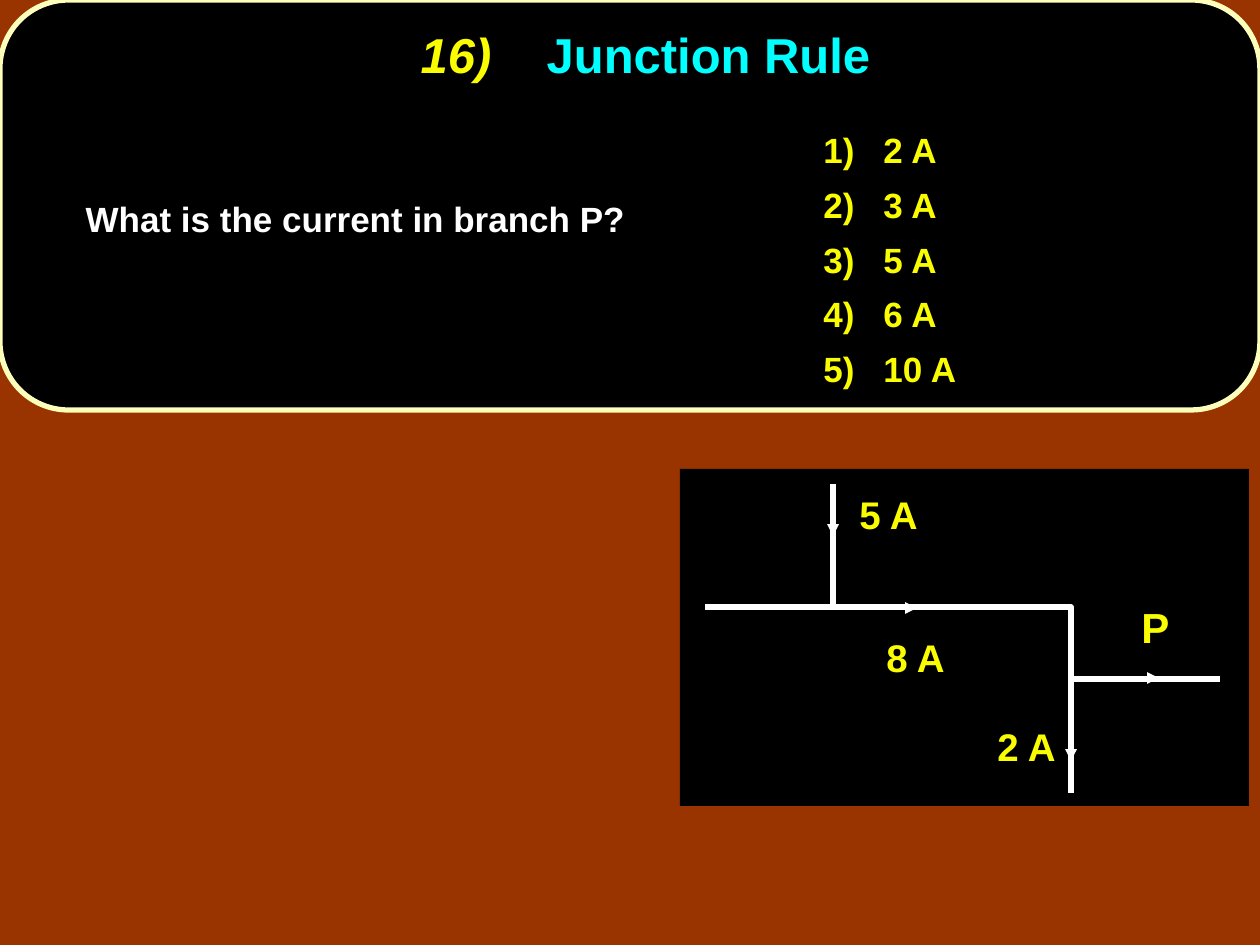
from pptx import Presentation
from pptx.dml.color import RGBColor
from pptx.enum.shapes import MSO_CONNECTOR, MSO_SHAPE
from pptx.enum.text import MSO_ANCHOR, MSO_AUTO_SIZE, PP_ALIGN
from pptx.oxml.ns import qn
from pptx.util import Pt
from lxml import etree

LINE = MSO_CONNECTOR.STRAIGHT
RECT, ROUND = MSO_SHAPE.RECTANGLE, MSO_SHAPE.ROUNDED_RECTANGLE
MID, TOP = MSO_ANCHOR.MIDDLE, MSO_ANCHOR.TOP
NONE, GROW = MSO_AUTO_SIZE.NONE, MSO_AUTO_SIZE.SHAPE_TO_FIT_TEXT
LEFT, CENTER = PP_ALIGN.LEFT, PP_ALIGN.CENTER
PX = 914400 / 126
BLACK, WHITE, YELLOW, CYAN, CREAM = "000000", "FFFFFF", "FAFD00", "00FFFF", "FCFEB9"


def hue(code):
    return RGBColor.from_string(code)


def write(shape, lines, box, size=22, color=YELLOW, space=0.9, before=0,
          align=LEFT, anchor=TOP, wrap=False, fit=GROW, hang=0):
    shape.left, shape.top, shape.width, shape.height = [round(v * PX) for v in box]
    frame = shape.text_frame
    frame.word_wrap, frame.auto_size, frame.vertical_anchor = wrap, fit, anchor
    for i, line in enumerate(lines):
        para = frame.add_paragraph() if i else frame.paragraphs[0]
        para.alignment, para.line_spacing = align, space
        para.space_before = Pt(before)
        props = para._p.get_or_add_pPr()
        props.set("marL", str(round(hang * PX)))
        props.set("indent", str(round(-hang * PX)))
        etree.SubElement(props, qn("a:buNone"))
        for text, tint, slant in [(line, color, None)] if isinstance(line, str) else line:
            run = para.add_run()
            run.text = text
            font = run.font
            font.name, font.size, font.bold, font.italic = "Arial", Pt(size), True, slant
            font.color.rgb = hue(tint)


deck = Presentation()
deck.slide_width, deck.slide_height = round(1260 * PX), round(945 * PX)
slide = deck.slides.add_slide(deck.slide_layouts[1])
back = slide.background.fill
back.solid()
back.fore_color.rgb = hue("993300")
title, body = slide.placeholders
tree = slide.shapes

panel = tree.add_shape(ROUND, 0, 0, round(1260 * PX), round(410 * PX))
panel.adjustments[0] = 0.167
panel.line.color.rgb = hue(CREAM)
panel.line.width = Pt(3)
tree._spTree.insert(2, panel._element)

write(title, [[("16)\t", YELLOW, True), ("Junction Rule", CYAN, False)]],
      (91, 0, 1109, 116), size=28, align=CENTER, anchor=MID, wrap=True, fit=NONE)
write(body, ["What is the current in branch P?"], (73, 183, 644, 71), size=20,
      color=WHITE, space=1.2, before=6, wrap=True, fit=NONE, hang=55)
amps = [2, 3, 5, 6, 10]
write(tree.add_textbox(0, 0, 0, 0), [f"{n})\t{amp} A" for n, amp in enumerate(amps, 1)],
      (811, 110, 236, 286), size=20, space=1.3, wrap=True, hang=60)

group = tree.add_group_shape().shapes
board = group.add_shape(RECT, *[round(v * PX) for v in (680, 469, 569, 337)])
board.line.fill.background()
for shape in (panel, board):
    shape.shadow.inherit = False
    shape.fill.solid()
    shape.fill.fore_color.rgb = hue(BLACK)

pen = group.build_freeform(1071, 793, scale=PX)
pen.add_line_segments([(1071, 607), (705, 607)], close=False)
wire = pen.convert_to_shape()
wire.fill.background()
wire.shadow.inherit = False
wire.line.color.rgb = hue(WHITE)
wire.line.width = Pt(3)

lines = [
    (833, 484, 833, 606, False),
    (1071, 679, 1220, 679, False),
    (833, 517, 833, 536, True),
    (1071, 742, 1071, 761, True),
    (902, 608, 917, 608, True),
    (1144, 678, 1159, 678, True),
]
for *ends, arrow in lines:
    link = group.add_connector(LINE, *[round(v * PX) for v in ends])
    link.line.color.rgb = hue(WHITE)
    link.line.width = Pt(2.25 if arrow else 3)
    if arrow:
        etree.SubElement(link.line._get_or_add_ln(), qn("a:tailEnd"), type="triangle")
    etree.SubElement(link._element.spPr, qn("a:effectLst"))

labels = [("5 A", 847, 490), ("8 A", 874, 633), ("2 A", 985, 722)]
for text, x, y in labels:
    write(group.add_textbox(0, 0, 0, 0), [text], (x, y, 86, 54))
write(group.add_textbox(0, 0, 0, 0), ["P"], (1129, 601, 53, 58), size=24)

deck.save("out.pptx")
